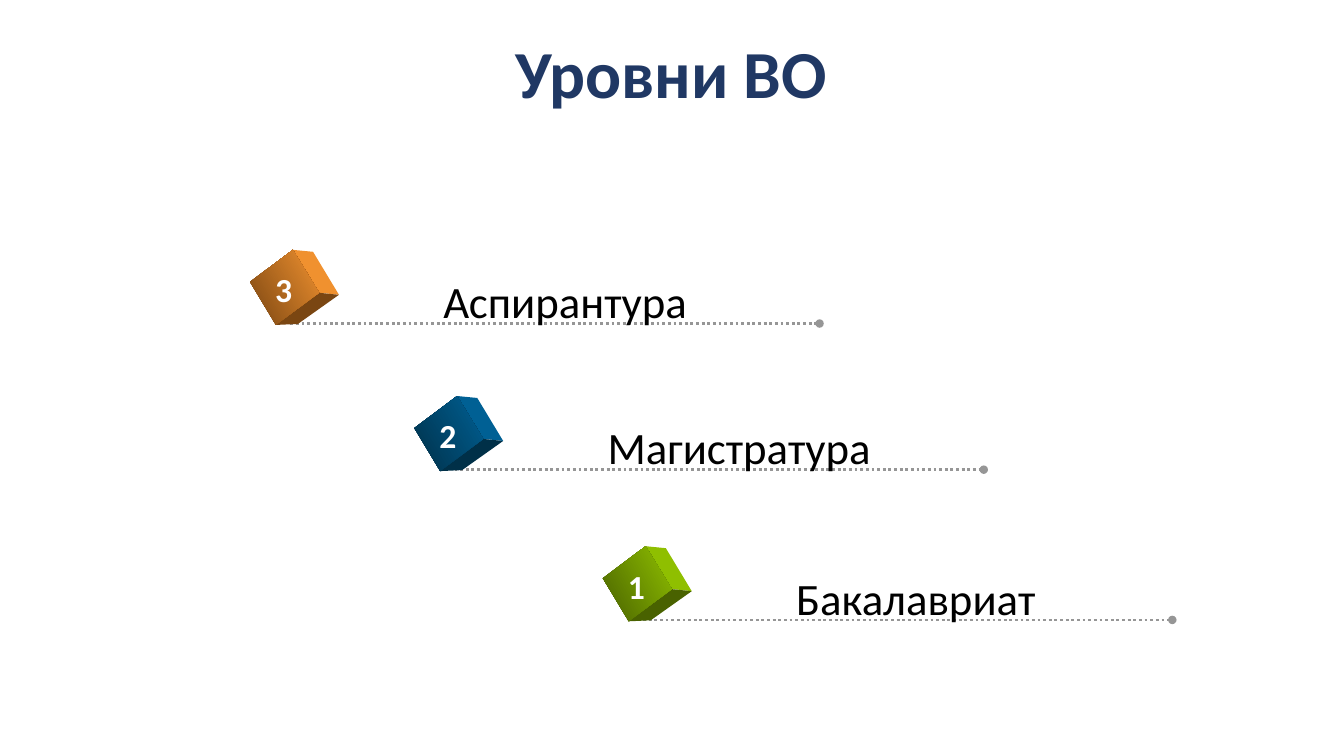
from dataclasses import dataclass

from lxml import etree
from pptx import Presentation
from pptx.dml.color import RGBColor
from pptx.enum.dml import MSO_LINE
from pptx.enum.shapes import MSO_CONNECTOR
from pptx.enum.text import MSO_ANCHOR, MSO_AUTO_SIZE, PP_ALIGN
from pptx.oxml.ns import qn
from pptx.shapes.group import GroupShape
from pptx.util import Pt

STRAIGHT = MSO_CONNECTOR.STRAIGHT
DOTTED = MSO_LINE.ROUND_DOT
MIDDLE = MSO_ANCHOR.MIDDLE
CENTER = PP_ALIGN.CENTER
NO_FIT = MSO_AUTO_SIZE.NONE
GROW = MSO_AUTO_SIZE.SHAPE_TO_FIT_TEXT

COLORS = {
    "title": "203864", "label": "000000", "number": "FFFFFF", "rule": "969696",
    "orange": "F0912F", "orange_shade": "7A4612",
    "blue": "006094", "blue_shade": "003048",
    "green": "8FBF00", "green_shade": "496200",
}
FORMATS = {
    "title": {"name": "Calibri", "size": Pt(48), "bold": True},
    "label": {"name": "Calibri", "size": Pt(32), "bold": False},
    "number": {"name": "Calibri", "size": Pt(24), "bold": True},
}
RULE_LENGTH = 378

LEFT, TOP, TOP_BACK = (-28.8, -29.7), (1.8, -52.6), (16.2, -51.2)
RIGHT_BACK, RIGHT, BOTTOM, BOTTOM_BACK = (34.7, -20.5), (20.5, -22), (-10.3, 1), (5.4, 0.3)
FRONT_FACE = (LEFT, TOP, RIGHT, BOTTOM)
SIDE_FACE = (TOP, TOP_BACK, RIGHT_BACK, RIGHT)
UNDER_FACE = (BOTTOM, RIGHT, RIGHT_BACK, BOTTOM_BACK)


@dataclass
class Level:
    number: str
    name: str
    color: str
    x: float
    y: float
    label_width: float


LEVELS = [
    Level("1", "Бакалавриат", "green", 459.4, 442.8, 187.2),
    Level("2", "Магистратура", "blue", 324.7, 335.5, 204.5),
    Level("3", "Аспирантура", "orange", 207.4, 231.1, 190.1),
]


def rgb(key: str) -> RGBColor:
    return RGBColor.from_string(COLORS[key])


def write(tf, text: str, style: str):
    p = tf.paragraphs[0]
    r = p.add_run()
    r.text = text
    for attr, value in FORMATS[style].items():
        setattr(r.font, attr, value)
    r.font.color.rgb = rgb(style)
    return p


def add_text(g: GroupShape, text: str, style: str, x: float, y: float, w: float, h: float) -> None:
    tf = g.shapes.add_textbox(Pt(x), Pt(y), Pt(w), Pt(h)).text_frame
    tf.word_wrap = False
    tf.auto_size = GROW
    write(tf, text, style)


def add_rule(g: GroupShape, x: float, y: float) -> None:
    c = g.shapes.add_connector(STRAIGHT, Pt(x), Pt(y), Pt(x + RULE_LENGTH), Pt(y))
    c.line.color.rgb = rgb("rule")
    c.line.width = Pt(2)
    c.line.dash_style = DOTTED
    sp_pr = c._element.spPr
    etree.SubElement(sp_pr.find(qn("a:ln")), qn("a:tailEnd"), type="oval")
    etree.SubElement(sp_pr, qn("a:effectLst"))


def add_face(g: GroupShape, level: Level, corners: tuple):
    points = [(Pt(level.x + dx), Pt(level.y + dy)) for dx, dy in corners]
    builder = g.shapes.build_freeform(*points[0])
    builder.add_line_segments(points[1:], close=True)
    sp = builder.convert_to_shape()
    sp.shadow.inherit = False
    sp.line.fill.background()
    return sp


def add_cube(g: GroupShape, level: Level) -> None:
    shade = level.color + "_shade"
    for corners, color in ((SIDE_FACE, level.color), (UNDER_FACE, shade)):
        fill = add_face(g, level, corners).fill
        fill.solid()
        fill.fore_color.rgb = rgb(color)
    fill = add_face(g, level, FRONT_FACE).fill
    fill.gradient()
    fill.gradient_angle = 30
    for stop, color in zip(fill.gradient_stops, (shade, level.color)):
        stop.color.rgb = rgb(color)


def add_level(slide, level: Level) -> None:
    g = slide.shapes.add_group_shape()
    add_rule(g, level.x, level.y)
    add_cube(g, level)
    add_text(g, level.name, "label", level.x + 102.2, level.y - 38.9, level.label_width, 46.1)
    add_text(g, level.number, "number", level.x - 18, level.y - 42.5, 26.6, 36.7)


def main() -> None:
    prs = Presentation()
    prs.slide_width, prs.slide_height = Pt(960), Pt(540)
    slide = prs.slides.add_slide(prs.slide_layouts[5])
    title = slide.shapes.title
    title.left, title.top, title.width, title.height = Pt(169.2), Pt(23.8), Pt(620.6), Pt(62.6)
    tf = title.text_frame
    tf.auto_size = NO_FIT
    tf.vertical_anchor = MIDDLE
    p = write(tf, "Уровни ВО", "title")
    p.alignment = CENTER
    p.line_spacing = 0.9
    for level in LEVELS:
        add_level(slide, level)
    prs.save("out.pptx")


if __name__ == "__main__":
    main()
